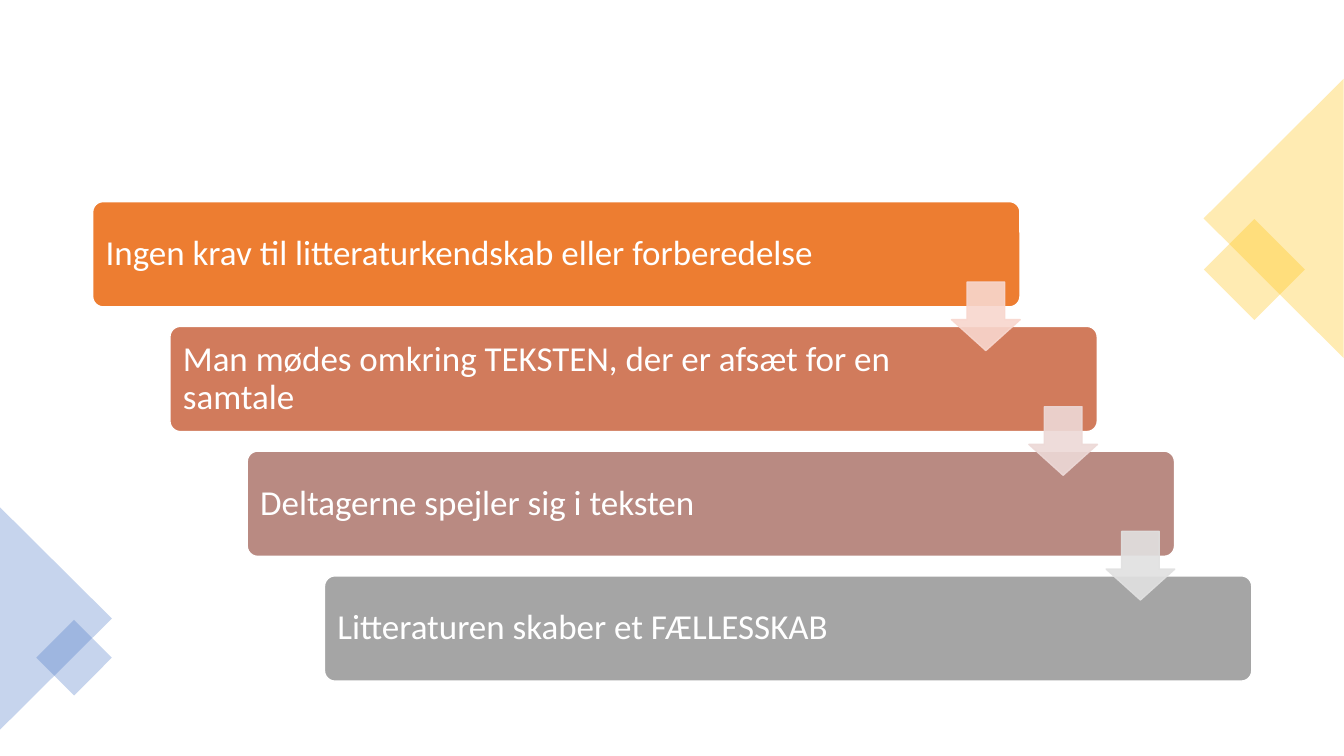
from pptx import Presentation
from pptx.dml.color import RGBColor as Rgb
from pptx.enum.shapes import MSO_SHAPE as Kind
from pptx.enum.text import MSO_ANCHOR as Anchor, PP_ALIGN as Align
from pptx.oxml.ns import qn
from pptx.util import Pt
from lxml.etree import SubElement as Sub

HUES = {
    "gold": "FFC000", "blue": "4472C4", "white": "FFFFFF",
    "step1": "ED7D31", "step2": "D17B5C", "step3": "B98A82", "step4": "A5A5A5",
    "arrow1": "F8D7CE", "arrow2": "EDD9D7", "arrow3": "E1E1E1",
}
STEPS = [
    "Ingen krav til litteraturkendskab eller forberedelse",
    "Man mødes omkring TEKSTEN, der er afsæt for en samtale",
    "Deltagerne spejler sig i teksten",
    "Litteraturen skaber et FÆLLESSKAB",
]
DX, DY = 55.2, 89.1


class Deck:
    font = "Calibri"
    size = 25

    def __init__(self, slide):
        self.slide = slide

    def paint(self, fill, hue, alpha=100):
        fill.solid()
        fill.fore_color.rgb = Rgb.from_string(HUES[hue])
        if alpha < 100:
            color = fill._xPr.find(qn("a:solidFill"))[0]
            Sub(color, qn("a:alpha")).set("val", str(alpha * 1000))

    def shape(self, kind, box, hue, alpha=100, turn=0, edge=None):
        shape = self.slide.shapes.add_shape(kind, *map(Pt, box))
        shape.shadow.inherit = False
        shape.rotation = turn
        self.paint(shape.fill, hue, alpha)
        if edge:
            shape.line.width = Pt(1)
            self.paint(shape.line.fill, edge, alpha)
        else:
            shape.line.fill.background()
        return shape

    def step(self, left, top, text, hue):
        box = (left, top, 662.4, 75.2)
        shape = self.shape(Kind.ROUNDED_RECTANGLE, box, hue, edge="white")
        shape.adjustments[0] = 0.1
        frame = shape.text_frame
        frame.word_wrap = True
        frame.vertical_anchor = Anchor.MIDDLE
        frame.margin_left, frame.margin_right = Pt(7.2), Pt(112)
        frame.text = text
        par = frame.paragraphs[0]
        par.alignment = Align.LEFT
        par.line_spacing = 0.9
        par.font.name = self.font
        par.font.size = Pt(self.size)
        par.font.color.rgb = Rgb.from_string(HUES["white"])

    def arrow(self, left, top, hue):
        shape = self.shape(Kind.DOWN_ARROW, (left, top, 49, 49), hue, 90, edge=hue)
        shape.adjustments[0] = 0.45
        shape.adjustments[1] = 0.45
        shape.adjustments[0] = 0.55


def main():
    prs = Presentation()
    prs.slide_width, prs.slide_height = Pt(960), Pt(540)
    deck = Deck(prs.slides.add_slide(prs.slide_layouts[6]))
    deck.shape(Kind.RECTANGLE, (870.5, 167, 51, 51), "gold", 30, 45)
    deck.shape(Kind.ISOSCELES_TRIANGLE, (810, 106, 199.5, 100), "gold", 30, 270)
    deck.shape(Kind.ISOSCELES_TRIANGLE, (-39.6, 401.8, 159, 80), "blue", 30, 90)
    deck.shape(Kind.RECTANGLE, (33.8, 450.7, 38.2, 38.2), "blue", 30, 45)
    for i, text in enumerate(STEPS):
        deck.step(66.2 + i * DX, 144 + i * DY, text, f"step{i + 1}")
    for i in range(len(STEPS) - 1):
        deck.arrow(679.7 + i * DX, 201.4 + i * DY, f"arrow{i + 1}")
    prs.save("out.pptx")


if __name__ == "__main__":
    main()
